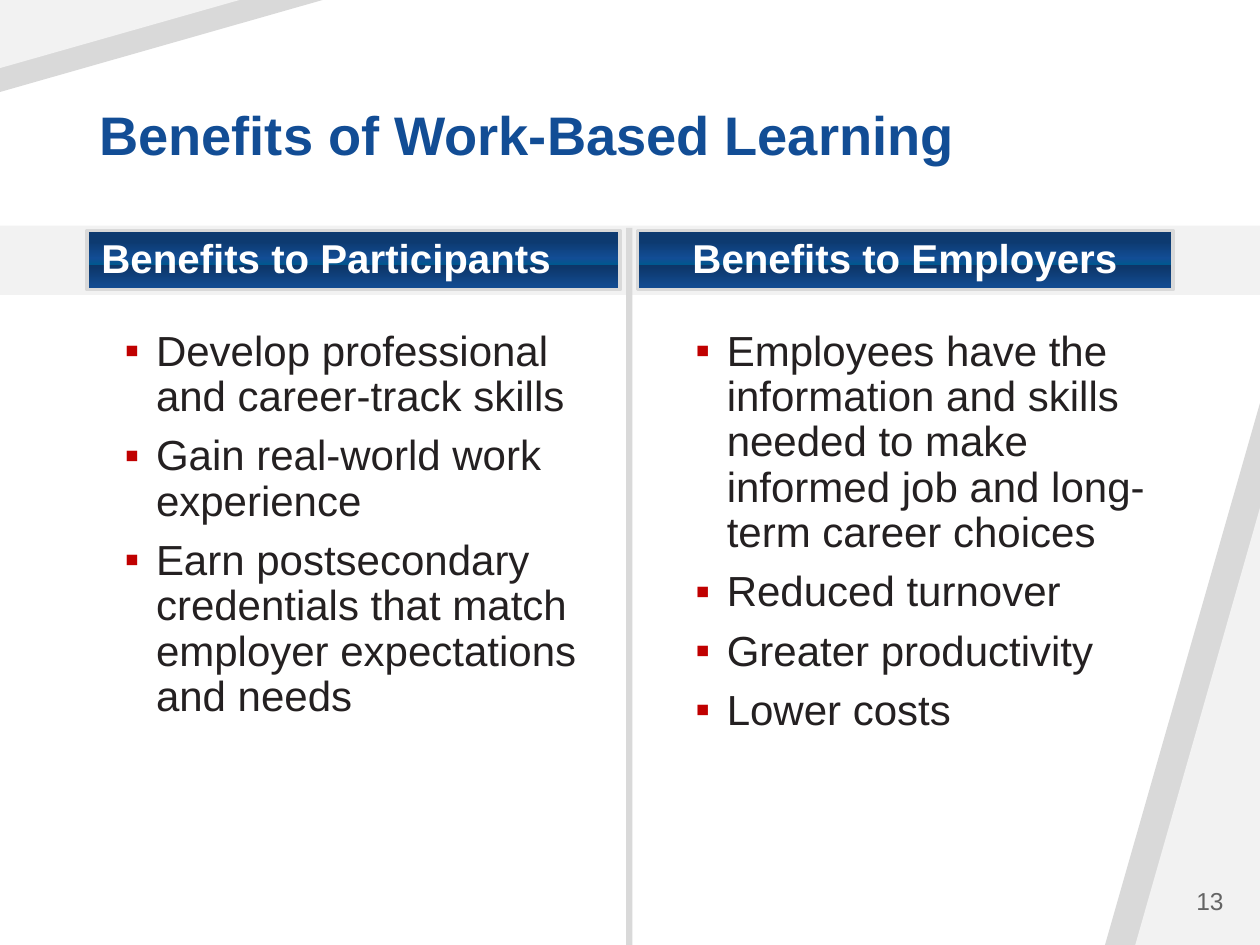
from dataclasses import dataclass

import lxml.etree
import pptx
import pptx.dml.color
import pptx.enum.shapes
import pptx.enum.text
import pptx.oxml
import pptx.oxml.ns
import pptx.util

Inches = pptx.util.Inches
Pt = pptx.util.Pt
Preset = pptx.enum.shapes.MSO_SHAPE
Align = pptx.enum.text.PP_ALIGN
Anchor = pptx.enum.text.MSO_ANCHOR


@dataclass(frozen=True)
class Theme:
    font: str = "Arial"
    pale: str = "F2F2F2"
    grey: str = "D9D9D9"
    ink: str = "242021"
    white: str = "FFFFFF"
    page_grey: str = "646464"
    bullet: str = "C00000"
    blues: tuple = ((19, "0D3A70"), (47, "124D95"), (58, "00588F"),
                    (59, "0D3668"), (100, "124D95"))
    title_size: int = 31
    header_size: int = 23
    body_size: int = 24
    page_size: int = 14


@dataclass(frozen=True)
class Box:
    left: float
    top: float
    width: float
    height: float

    def lengths(self) -> tuple:
        return tuple(Inches(v) for v in (self.left, self.top, self.width, self.height))


@dataclass(frozen=True)
class Wedge:
    box: Box
    color: str
    rotation: int


@dataclass(frozen=True)
class Column:
    header: str
    header_box: Box
    benefits: tuple
    benefits_box: Box


THEME = Theme()

WEDGES = (
    Wedge(Box(8.77, 3.2, 1.23, 4.3), THEME.grey, 0),
    Wedge(Box(9.01, 4.03, 0.99, 3.47), THEME.pale, 0),
    Wedge(Box(0, 0, 2.56, 0.73), THEME.grey, 180),
    Wedge(Box(0, 0, 1.9, 0.54), THEME.pale, 180),
)

COLUMNS = (
    Column(
        "Benefits to Participants\t",
        Box(0.69, 1.83, 4.23, 0.47),
        ("Develop professional and career-track skills",
         "Gain real-world work experience",
         "Earn postsecondary credentials that match employer expectations and needs"),
        Box(0.63, 2.57, 4.05, 4.2),
    ),
    Column(
        "Benefits to Employers",
        Box(5.06, 1.83, 4.25, 0.47),
        ("Employees have the information and skills needed to make informed job "
         "and long-term career choices",
         "Reduced turnover",
         "Greater productivity",
         "Lower costs"),
        Box(5.16, 2.57, 4.05, 4.2),
    ),
)


def rgb(color: str):
    return pptx.dml.color.RGBColor.from_string(color)


def apply(target, values: dict) -> None:
    for name, value in values.items():
        setattr(target, name, value)


def blue_gradient():
    stops = "".join(
        f'<a:gs pos="{position * 1000}"><a:srgbClr val="{color}"/></a:gs>'
        for position, color in THEME.blues)
    return pptx.oxml.parse_xml(
        f'<a:gradFill {pptx.oxml.ns.nsdecls("a")} rotWithShape="1">'
        f'<a:gsLst>{stops}</a:gsLst><a:lin ang="5400000" scaled="0"/></a:gradFill>')


def add_plain(slide, preset, box: Box, color: str):
    plain = slide.shapes.add_shape(preset, *box.lengths())
    plain.shadow.inherit = False
    plain.fill.solid()
    plain.fill.fore_color.rgb = rgb(color)
    plain.line.fill.background()
    return plain


def add_wedge(slide, wedge: Wedge) -> None:
    triangle = add_plain(slide, Preset.ISOSCELES_TRIANGLE, wedge.box, wedge.color)
    triangle.adjustments[0] = 1
    triangle.rotation = wedge.rotation


def write(paragraph, words: str, font: dict, color: str, layout: dict):
    run = paragraph.add_run()
    run.text = words
    apply(paragraph, layout)
    apply(run.font, {"name": THEME.font, **font})
    run.font.color.rgb = rgb(color)
    return run


def add_text(slide, box: Box, anchor):
    frame = slide.shapes.add_textbox(*box.lengths()).text_frame
    apply(frame, {"word_wrap": True, "vertical_anchor": anchor})
    return frame


def add_title(slide, words: str) -> None:
    frame = add_text(slide, Box(0.69, 0.4, 8.62, 0.98), Anchor.BOTTOM)
    run = write(frame.paragraphs[0], words,
                {"size": Pt(THEME.title_size), "bold": True},
                THEME.blues[1][1], {"line_spacing": 0.9})
    properties = run.font.fill._xPr
    solid = properties.find(pptx.oxml.ns.qn("a:solidFill"))
    properties.replace(solid, blue_gradient())


def add_header(slide, words: str, box: Box) -> None:
    header = add_plain(slide, Preset.RECTANGLE, box, THEME.blues[1][1])
    properties = header.element.spPr
    properties.replace(properties.find(pptx.oxml.ns.qn("a:solidFill")), blue_gradient())
    header.line.color.rgb = rgb(THEME.grey)
    header.line.width = Pt(2)
    apply(header.text_frame, {
        "word_wrap": True, "vertical_anchor": Anchor.MIDDLE,
        "margin_left": Inches(0.05), "margin_right": Inches(0.05),
        "margin_top": Inches(0.06), "margin_bottom": Inches(0.06)})
    write(header.text_frame.paragraphs[0], words,
          {"size": Pt(THEME.header_size), "bold": True}, THEME.white,
          {"alignment": Align.CENTER, "line_spacing": 0.9})


def add_bullet(paragraph) -> None:
    properties = paragraph._p.get_or_add_pPr()
    properties.set("marL", str(Inches(0.51)))
    properties.set("indent", str(Inches(-0.25)))
    color = lxml.etree.SubElement(properties, pptx.oxml.ns.qn("a:buClr"))
    lxml.etree.SubElement(color, pptx.oxml.ns.qn("a:srgbClr"), val=THEME.bullet)
    lxml.etree.SubElement(properties, pptx.oxml.ns.qn("a:buFont"), typeface=THEME.font)
    lxml.etree.SubElement(properties, pptx.oxml.ns.qn("a:buChar"), char="▪")


def add_benefits(slide, benefits: tuple, box: Box) -> None:
    frame = add_text(slide, box, Anchor.TOP)
    for index, benefit in enumerate(benefits):
        paragraph = frame.add_paragraph() if index else frame.paragraphs[0]
        add_bullet(paragraph)
        write(paragraph, benefit, {"size": Pt(THEME.body_size)}, THEME.ink,
              {"level": 1, "line_spacing": 0.9, "space_before": Pt(8 if index else 0)})


def main() -> None:
    deck = pptx.Presentation()
    apply(deck, {"slide_width": Inches(10), "slide_height": Inches(7.5)})
    slide = deck.slides.add_slide(deck.slide_layouts[6])
    for wedge in WEDGES:
        add_wedge(slide, wedge)
    add_plain(slide, Preset.RECTANGLE, Box(0, 1.79, 10, 0.55), THEME.pale)
    add_plain(slide, Preset.RECTANGLE, Box(4.97, 1.81, 0.05, 5.7), THEME.grey)
    add_title(slide, "Benefits of Work-Based Learning")
    for column in COLUMNS:
        add_header(slide, column.header, column.header_box)
        add_benefits(slide, column.benefits, column.benefits_box)
    page = add_text(slide, Box(8.41, 6.95, 1.4, 0.4), Anchor.MIDDLE)
    write(page.paragraphs[0], "13", {"size": Pt(THEME.page_size)},
          THEME.page_grey, {"alignment": Align.RIGHT})
    deck.save("out.pptx")


if __name__ == "__main__":
    main()
